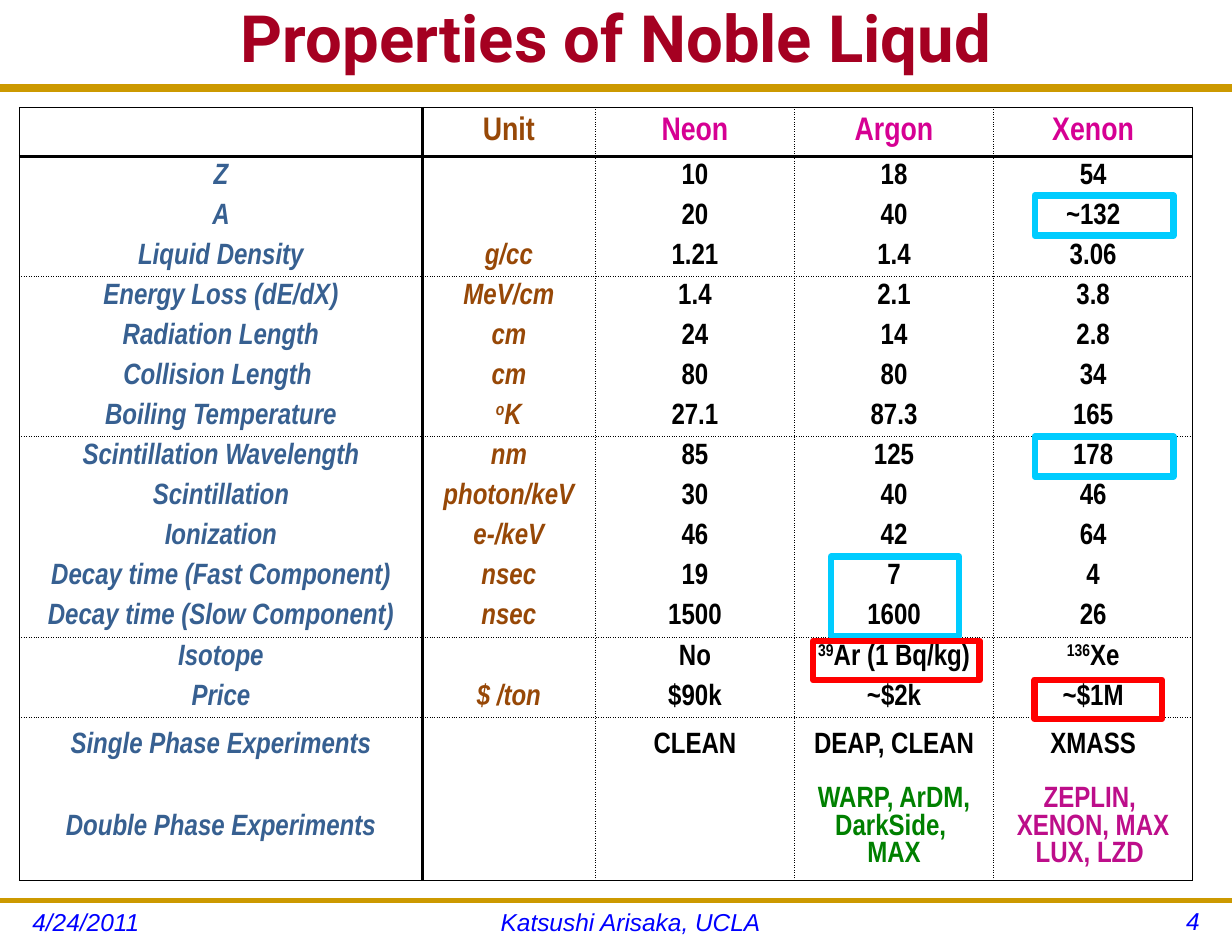
from lxml.etree import SubElement
from pptx import Presentation
from pptx.dml.color import RGBColor
from pptx.enum.shapes import MSO_CONNECTOR, MSO_SHAPE
from pptx.enum.text import MSO_ANCHOR as Anchor, MSO_AUTO_SIZE as AutoSize, PP_ALIGN as Align
from pptx.oxml.ns import qn
from pptx.util import Pt

CRIMSON = RGBColor(0xA5, 0x00, 0x21)
GOLD = RGBColor(0xCC, 0x99, 0x00)
BLUE = RGBColor(0x00, 0x00, 0xFF)
BROWN = RGBColor(0x97, 0x48, 0x07)
PINK = RGBColor(0xD6, 0x00, 0x93)
STEEL = RGBColor(0x37, 0x60, 0x91)
BLACK = RGBColor(0x00, 0x00, 0x00)
GREEN = RGBColor(0x00, 0x80, 0x00)
PURPLE = RGBColor(0xBD, 0x0E, 0x8A)
CYAN = RGBColor(0x00, 0xCC, 0xFF)
RED = RGBColor(0xFF, 0x00, 0x00)

PAGE_WIDTH, PAGE_HEIGHT = 756, 576
TITLE = "Properties of Noble Liqud"
SUPER = "^"
ROWS = [
    ("", "Unit", "Neon", "Argon", "Xenon"),
    ("Z", "", "10", "18", "54"),
    ("A", "", "20", "40", "~132"),
    ("Liquid Density", "g/cc", "1.21", "1.4", "3.06"),
    ("Energy Loss (dE/dX)", "MeV/cm", "1.4", "2.1", "3.8"),
    ("Radiation Length", "cm", "24", "14", "2.8"),
    ("Collision Length ", "cm", "80", "80", "34"),
    ("Boiling Temperature", "^o^K", "27.1", "87.3", "165"),
    ("Scintillation Wavelength", "nm", "85", "125", "178"),
    ("Scintillation", "photon/keV", "30", "40", "46"),
    ("Ionization", "e-/keV", "46", "42", "64"),
    ("Decay time (Fast Component)", "nsec", "19", "7", "4"),
    ("Decay time (Slow Component)", "nsec", "1500", "1600", "26"),
    ("Isotope", "", "No", "^39^Ar (1 Bq/kg)", "^136^Xe"),
    ("Price", "$ /ton", "$90k", "~$2k", "~$1M"),
    ("Single Phase Experiments", "", "CLEAN", "DEAP, CLEAN", "XMASS"),
    ("Double Phase Experiments", "", "", "WARP, ArDM, DarkSide, \nMAX",
     "ZEPLIN, \nXENON, MAX\nLUX, LZD "),
]
COLUMN_WIDTHS = [247.2, 106.2] + [122.2] * 3
ROW_HEIGHTS = [29.8] + [24.6] * 14 + [34.8, 59.6]
COLUMN_RULES = [1, 2, 0.5, 0.5, 0.5, 1]
ROW_RULES = {0: 1, 1: 2, 4: 0.5, 8: 0.5, 13: 0.5, 15: 0.5, 17: 1}
PLAIN_TABLE_STYLE = "{2D5ABB26-0587-4C30-8999-92F81FD0307C}"
SPECIAL_COLORS = {(16, 3): GREEN, (16, 4): PURPLE}

GOLD_RULES = [(54, 4.5), (552.2, 3)]
FOOTERS = [
    ("4/24/2011", 12, 553, 150, Align.LEFT),
    ("Katsushi Arisaka, UCLA", 168, 553, 438, Align.CENTER),
    ("4", 612, 552.2, 132, Align.RIGHT),
]
HIGHLIGHTS = [
    (635, 120, 85, 24.6, CYAN),
    (510, 341.4, 78.5, 48.6, CYAN),
    (635, 267.8, 85, 24.6, CYAN),
    (499, 393.2, 102.2, 24, RED),
    (635, 417, 78, 24, RED),
]


def style(span, font, size, color, bold=False, italic=False):
    span.font.name, span.font.size = font, Pt(size)
    span.font.bold, span.font.italic = bold, italic
    span.font.color.rgb = color


def set_margins(target, side, top, bottom):
    target.margin_left = target.margin_right = Pt(side)
    target.margin_top, target.margin_bottom = Pt(top), Pt(bottom)


def add_title(page):
    title = page.shapes.title
    title.left, title.top, title.width, title.height = Pt(12), Pt(0), Pt(732), Pt(54)
    frame = title.text_frame
    frame.text = TITLE
    frame.auto_size, frame.vertical_anchor = AutoSize.NONE, Anchor.MIDDLE
    set_margins(frame, 7.9, 3.6, 3.6)
    para = frame.paragraphs[0]
    para.alignment, para.line_spacing = Align.CENTER, 0.8
    style(para.runs[0], "Roboto", 40, CRIMSON, bold=True)


def add_gold_rule(page, y, width):
    rule = page.shapes.add_connector(MSO_CONNECTOR.STRAIGHT, 0, Pt(y), Pt(PAGE_WIDTH), Pt(y))
    rule.line.color.rgb, rule.line.width = GOLD, Pt(width)
    SubElement(rule._element.spPr, qn("a:effectLst"))


def add_footer(page, text, left, top, width, align):
    box = page.shapes.add_textbox(Pt(left), Pt(top), Pt(width), Pt(PAGE_HEIGHT - top))
    frame = box.text_frame
    frame.text, frame.word_wrap = text, True
    set_margins(frame, 7.9, 3.6, 3.6)
    para = frame.paragraphs[0]
    para.alignment = align
    style(para.runs[0], "Arial", 15, BLUE, italic=True)


def cell_style(row, column):
    if row == 0:
        return 20, BROWN if column == 1 else PINK, False
    if column < 2:
        return 18, (STEEL, BROWN)[column], True
    return 18, SPECIAL_COLORS.get((row, column), BLACK), False


def add_border(cell, side, width):
    line = SubElement(cell._tc.get_or_add_tcPr(), qn(f"a:ln{side}"), w=str(Pt(width)))
    if not width:
        SubElement(line, qn("a:noFill"))
        return
    fill = SubElement(line, qn("a:solidFill"))
    SubElement(fill, qn("a:srgbClr"), val=str(BLACK))
    SubElement(line, qn("a:prstDash"), val="sysDot" if width < 1 else "solid")


def fill_cell(cell, row, column, text):
    cell.vertical_anchor = Anchor.MIDDLE
    set_margins(cell, 0.7, 0.7, 0)
    size, color, italic = cell_style(row, column)
    frame = cell.text_frame
    for index, line in enumerate(text.split("\n")):
        para = frame.add_paragraph() if index else frame.paragraphs[0]
        para.alignment = Align.CENTER
        for part, piece in enumerate(line.split(SUPER)):
            if piece:
                span = para.add_run()
                span.text = piece
                style(span, "Arial Narrow", size, color, bold=True, italic=italic)
                if part % 2:
                    span._r.get_or_add_rPr().set("baseline", "30000")
    add_border(cell, "L", COLUMN_RULES[column])
    add_border(cell, "R", COLUMN_RULES[column + 1])
    add_border(cell, "T", ROW_RULES.get(row, 0))
    add_border(cell, "B", ROW_RULES.get(row + 1, 0))
    cell.fill.background()


def add_properties_table(page):
    frame = page.shapes.add_table(len(ROWS), len(COLUMN_WIDTHS), Pt(12), Pt(66),
                                  Pt(sum(COLUMN_WIDTHS)), Pt(sum(ROW_HEIGHTS)))
    table = frame.table
    table.first_row = table.horz_banding = False
    table._tbl.tblPr.find(qn("a:tableStyleId")).text = PLAIN_TABLE_STYLE
    for column, width in zip(table.columns, COLUMN_WIDTHS):
        column.width = Pt(width)
    for row, height in zip(table.rows, ROW_HEIGHTS):
        row.height = Pt(height)
    for row, texts in enumerate(ROWS):
        for column, text in enumerate(texts):
            fill_cell(table.cell(row, column), row, column, text)


def add_highlight(page, left, top, width, height, color):
    box = page.shapes.add_shape(MSO_SHAPE.RECTANGLE, Pt(left), Pt(top), Pt(width), Pt(height))
    box.shadow.inherit = False
    box.fill.background()
    box.line.color.rgb, box.line.width = color, Pt(4)


def main():
    deck = Presentation()
    deck.slide_width, deck.slide_height = Pt(PAGE_WIDTH), Pt(PAGE_HEIGHT)
    page = deck.slides.add_slide(deck.slide_layouts[5])
    for rule in GOLD_RULES:
        add_gold_rule(page, *rule)
    add_title(page)
    for footer in FOOTERS:
        add_footer(page, *footer)
    add_properties_table(page)
    for highlight in HIGHLIGHTS:
        add_highlight(page, *highlight)
    deck.save("out.pptx")


if __name__ == "__main__":
    main()
